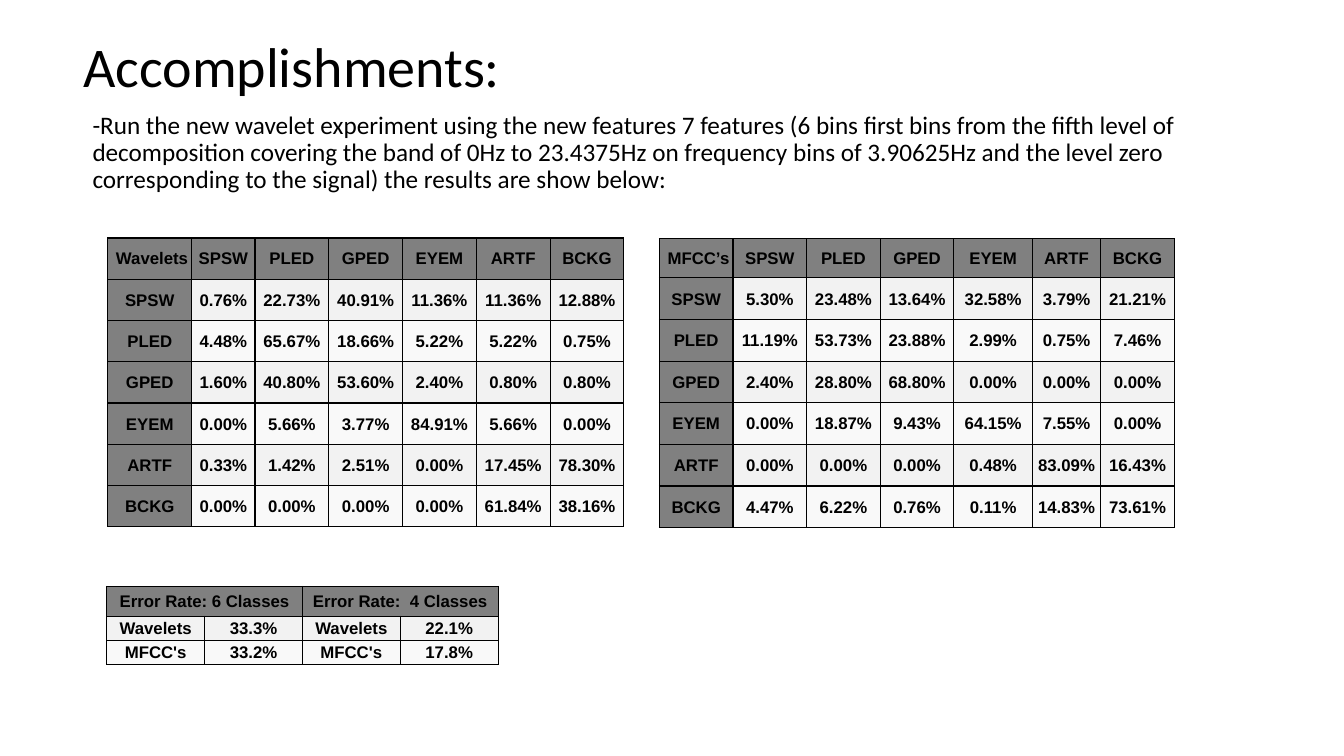
from dataclasses import dataclass

from lxml.etree import SubElement
from pptx import Presentation
from pptx.dml.color import RGBColor
from pptx.enum.text import MSO_ANCHOR as Anchor, MSO_AUTO_SIZE as AutoSize, PP_ALIGN as Align
from pptx.oxml.ns import qn
from pptx.util import Pt


@dataclass(frozen=True)
class Theme:
    text_font: str = "Calibri"
    table_font: str = "Arial"
    title_size: int = 40
    body_size: int = 18
    table_size: int = 12
    ink: str = "000000"
    heading: str = "808080"
    bands: tuple = ("F9F9F9", "F2F2F2")


THEME = Theme()

INTRODUCTION = (
    "-Run the new wavelet experiment using the new features 7 features "
    "(6 bins first bins from the fifth level of decomposition covering the band "
    "of 0Hz to 23.4375Hz on frequency bins of 3.90625Hz and the level zero "
    "corresponding to the signal) the results are show below:"
)
CLASSES = ["SPSW", "PLED", "GPED", "EYEM", "ARTF", "BCKG"]
WAVELET_RATES = [
    ["0.76%", "22.73%", "40.91%", "11.36%", "11.36%", "12.88%"],
    ["4.48%", "65.67%", "18.66%", "5.22%", "5.22%", "0.75%"],
    ["1.60%", "40.80%", "53.60%", "2.40%", "0.80%", "0.80%"],
    ["0.00%", "5.66%", "3.77%", "84.91%", "5.66%", "0.00%"],
    ["0.33%", "1.42%", "2.51%", "0.00%", "17.45%", "78.30%"],
    ["0.00%", "0.00%", "0.00%", "0.00%", "61.84%", "38.16%"],
]
MFCC_RATES = [
    ["5.30%", "23.48%", "13.64%", "32.58%", "3.79%", "21.21%"],
    ["11.19%", "53.73%", "23.88%", "2.99%", "0.75%", "7.46%"],
    ["2.40%", "28.80%", "68.80%", "0.00%", "0.00%", "0.00%"],
    ["0.00%", "18.87%", "9.43%", "64.15%", "7.55%", "0.00%"],
    ["0.00%", "0.00%", "0.00%", "0.48%", "83.09%", "16.43%"],
    ["4.47%", "6.22%", "0.76%", "0.11%", "14.83%", "73.61%"],
]
ERROR_RATES = [
    ["Error Rate: 6 Classes", "", "Error Rate:  4 Classes", ""],
    ["Wavelets", "33.3%", "Wavelets", "22.1%"],
    ["MFCC's", "33.2%", "MFCC's", "17.8%"],
]


def format_paragraph(paragraph, font_name, size, align, bold=False):
    paragraph.alignment = align
    font = paragraph.font
    font.name = font_name
    font.size = Pt(size)
    font.bold = bold
    font.color.rgb = RGBColor.from_string(THEME.ink)


def fill_text(shape, text, size):
    frame = shape.text_frame
    frame.word_wrap = True
    frame.auto_size = AutoSize.NONE
    frame.text = text
    paragraph = frame.paragraphs[0]
    paragraph.line_spacing = 0.9
    format_paragraph(paragraph, THEME.text_font, size, Align.LEFT)


def place_title(slide, text):
    title = slide.shapes.title
    title.left, title.top, title.width, title.height = Pt(-19.5), Pt(-8.5), Pt(780), Pt(116)
    fill_text(title, text, THEME.title_size)
    title.text_frame.vertical_anchor = Anchor.MIDDLE
    title.text_frame.margin_left = Pt(79)


def add_introduction(slide, text):
    box = slide.shapes.add_textbox(Pt(59), Pt(77), Pt(863), Pt(86))
    fill_text(box, text, THEME.body_size)


def add_borders(cell):
    properties = cell._tc.get_or_add_tcPr()
    for position, side in enumerate(("a:lnL", "a:lnR", "a:lnT", "a:lnB")):
        line = properties.makeelement(qn(side), {"w": str(Pt(1))})
        fill = SubElement(line, qn("a:solidFill"))
        SubElement(fill, qn("a:srgbClr"), val=THEME.ink)
        properties.insert(position, line)


def format_cell(cell, text, color):
    cell.text = text
    cell.vertical_anchor = Anchor.MIDDLE
    cell.margin_left = cell.margin_right = cell.margin_top = Pt(0.7)
    cell.margin_bottom = Pt(0)
    cell.fill.solid()
    cell.fill.fore_color.rgb = RGBColor.from_string(color)
    format_paragraph(cell.text_frame.paragraphs[0], THEME.table_font,
                     THEME.table_size, Align.CENTER, bold=True)
    add_borders(cell)


def add_grid(slide, left, top, widths, heights, rows, heading_columns):
    frame = slide.shapes.add_table(len(rows), len(widths), Pt(left), Pt(top),
                                   Pt(sum(widths)), Pt(sum(heights)))
    table = frame.table
    table.first_row = table.horz_banding = False
    for column, width in zip(table.columns, widths):
        column.width = Pt(width)
    for row, height in zip(table.rows, heights):
        row.height = Pt(height)
    for row_index, row in enumerate(rows):
        for column_index, text in enumerate(row):
            is_heading = row_index == 0 or column_index < heading_columns
            color = THEME.heading if is_heading else THEME.bands[row_index % 2]
            format_cell(table.cell(row_index, column_index), text, color)
    return table


def add_confusion_matrix(slide, left, top, widths, heights, name, rates):
    rows = [[name, *CLASSES]]
    rows += [[label, *values] for label, values in zip(CLASSES, rates)]
    table = add_grid(slide, left, top, widths, heights, rows, heading_columns=1)
    table.cell(0, 0).margin_left = Pt(4)


def add_error_table(slide, left, top):
    table = add_grid(slide, left, top, [69.9] * 4, [21.2, 17.3, 17.3],
                     ERROR_RATES, heading_columns=0)
    for column in (0, 2):
        table.cell(0, column).merge(table.cell(0, column + 1))


def main():
    presentation = Presentation()
    presentation.slide_width, presentation.slide_height = Pt(960), Pt(540)
    slide = presentation.slides.add_slide(presentation.slide_layouts[5])
    place_title(slide, "Accomplishments:")
    add_introduction(slide, INTRODUCTION)
    add_confusion_matrix(slide, 77, 170, [60, 45.2] + [52.7] * 5, [29.5] * 7,
                         "Wavelets", WAVELET_RATES)
    add_confusion_matrix(slide, 471, 170.5, [52.6] * 4 + [56.2, 48.7, 52.7],
                         [28] + [29.75] * 6, "MFCC’s", MFCC_RATES)
    add_error_table(slide, 76.3, 419)
    presentation.save("out.pptx")


if __name__ == "__main__":
    main()
